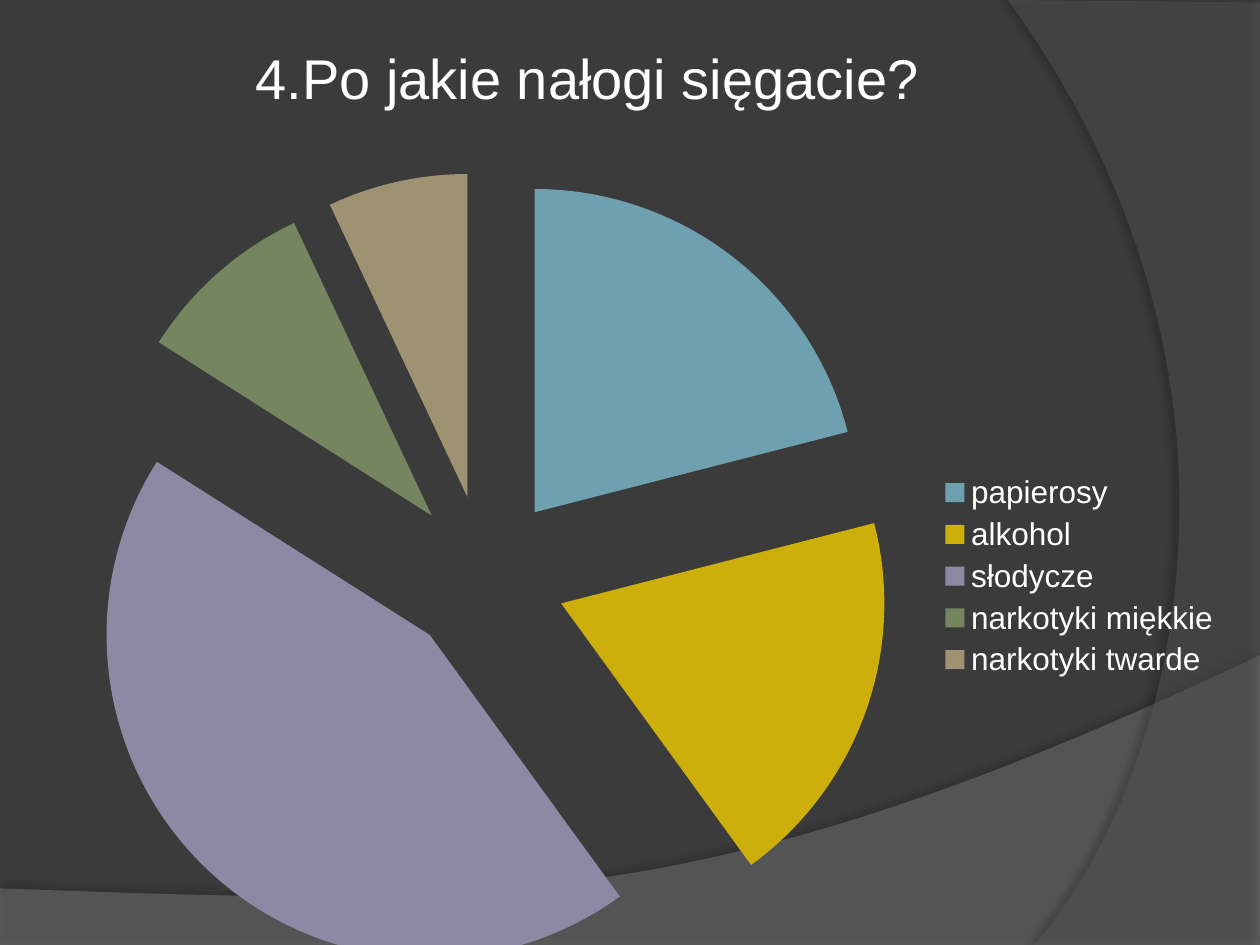
import pptx
import pptx.chart.data
import pptx.dml.color
import pptx.enum.chart
import pptx.enum.text
import pptx.oxml
import pptx.oxml.ns
import pptx.util
from pptx.util import Cm

SLIDE_WIDTH, SLIDE_HEIGHT = 25.4, 19.05
HABITS = {
    "papierosy": (21, "6EA0B0"),
    "alkohol": (19, "CCAF0A"),
    "słodycze": (44, "8D89A4"),
    "narkotyki miękkie": (9, "748560"),
    "narkotyki twarde": (7, "9E9273"),
}


def color(value):
    return pptx.dml.color.RGBColor.from_string(value)


def apply(target, values):
    for name, value in values.items():
        setattr(target, name, value)


def fill_solid(fill, value):
    fill.solid()
    fill.fore_color.rgb = color(value)


def xml(text):
    prefix, rest = text.split(" ", 1) if " " in text.split(">")[0] else text.split(">", 1)
    separator = " " if " " in text.split(">")[0] else ">"
    namespaces = pptx.oxml.ns.nsdecls("a", "c")
    return pptx.oxml.parse_xml(f"{prefix} {namespaces}{separator}{rest}")


def curve(start, control_1, control_2, end, steps=60):
    points = []
    for step in range(1, steps + 1):
        t = step / steps
        weights = ((1 - t) ** 3, 3 * t * (1 - t) ** 2, 3 * t * t * (1 - t), t**3)
        corners = (start, control_1, control_2, end)
        points.append(tuple(sum(w * p[axis] for w, p in zip(weights, corners)) for axis in (0, 1)))
    return points


class SlideBuilder:
    font = {"name": "Arial"}
    text_color = "FFFFFF"

    def __init__(self, slide, background):
        self.slide = slide
        fill_solid(slide.background.fill, background)

    def style_font(self, font, size):
        apply(font, {**self.font, "size": pptx.util.Pt(size), "bold": False})
        font.color.rgb = color(self.text_color)

    def wave(self, points, fill, opacity, shadow_opacity, distance, direction):
        first, *others = [(Cm(x), Cm(y)) for x, y in points]
        builder = self.slide.shapes.build_freeform(*first)
        builder.add_line_segments(others, close=True)
        shape = builder.convert_to_shape()
        fill_solid(shape.fill, fill)
        shape.line.fill.background()
        shape_color = shape.fill._xPr.find(".//" + pptx.oxml.ns.qn("a:srgbClr"))
        shape_color.append(xml(f'<a:alpha val="{opacity * 1000}"/>'))
        shape._element.spPr.append(xml(
            f'<a:effectLst ><a:outerShdw blurRad="{pptx.util.Pt(4)}" dist="{pptx.util.Pt(distance)}" '
            f'dir="{direction * 60000}" algn="ctr" rotWithShape="0"><a:srgbClr val="000000">'
            f'<a:alpha val="{shadow_opacity * 1000}"/></a:srgbClr></a:outerShdw></a:effectLst>'
        ))

    def title(self, text, left, top, width, height, size):
        shape = self.slide.shapes.title
        apply(shape, {"left": Cm(left), "top": Cm(top), "width": Cm(width), "height": Cm(height)})
        frame = shape.text_frame
        frame.text = text
        apply(frame, {
            "word_wrap": False,
            "auto_size": pptx.enum.text.MSO_AUTO_SIZE.SHAPE_TO_FIT_TEXT,
            "vertical_anchor": pptx.enum.text.MSO_ANCHOR.TOP,
        })
        paragraph = frame.paragraphs[0]
        paragraph.alignment = pptx.enum.text.PP_ALIGN.LEFT
        self.style_font(paragraph.runs[0].font, size)
        tree = self.slide.shapes._spTree
        tree.append(shape._element)

    def pie(self, slices, left, top, width, height, size, explosion):
        data = pptx.chart.data.CategoryChartData()
        data.categories = list(slices)
        data.add_series("Series 1", [value for value, _ in slices.values()])
        chart = self.slide.shapes.add_chart(
            pptx.enum.chart.XL_CHART_TYPE.PIE, Cm(left), Cm(top), Cm(width), Cm(height), data
        ).chart
        apply(chart, {"has_title": False, "has_legend": True})
        apply(chart.legend, {
            "position": pptx.enum.chart.XL_LEGEND_POSITION.RIGHT,
            "include_in_layout": False,
        })
        self.style_font(chart.font, size)
        plot = chart.plots[0]
        plot.vary_by_categories = True
        series = plot.series[0]
        for index, (_, fill) in enumerate(slices.values()):
            fill_solid(series.points[index].format.fill, fill)
        first_point = series._element.find(pptx.oxml.ns.qn("c:dPt"))
        first_point.addprevious(xml(f'<c:explosion val="{explosion}"/>'))


def main():
    presentation = pptx.Presentation()
    apply(presentation, {"slide_width": Cm(SLIDE_WIDTH), "slide_height": Cm(SLIDE_HEIGHT)})
    slide = presentation.slides.add_slide(presentation.slide_layouts[5])
    builder = SlideBuilder(slide, "3B3B3B")

    bottom_start = (SLIDE_WIDTH, 13.21)
    bottom_wave = [(0, 17.91), (0, SLIDE_HEIGHT), (SLIDE_WIDTH, SLIDE_HEIGHT), bottom_start]
    bottom_wave += curve(bottom_start, (14.2, 18.52), (9.93, 18.26), (0, 17.91))
    builder.wave(bottom_wave, "7F7F7F", 45, 35, 3.5, 270)

    right_start = (20.85, SLIDE_HEIGHT)
    right_wave = [(SLIDE_WIDTH, 0.05), (SLIDE_WIDTH, SLIDE_HEIGHT), right_start]
    right_wave += curve(right_start, (23.75, 15.72), (25.86, 7.62), (20.32, 0))
    builder.wave(right_wave, "5E5E5E", 40, 45, 4, 180)

    builder.title("4.Po jakie nałogi sięgacie?", 4.9, 0.74, 15.27, 1.63, 32)
    builder.pie(HABITS, 0.71, 3.12, 24.16, 16.99, 18, 25)
    presentation.save("out.pptx")


if __name__ == "__main__":
    main()
